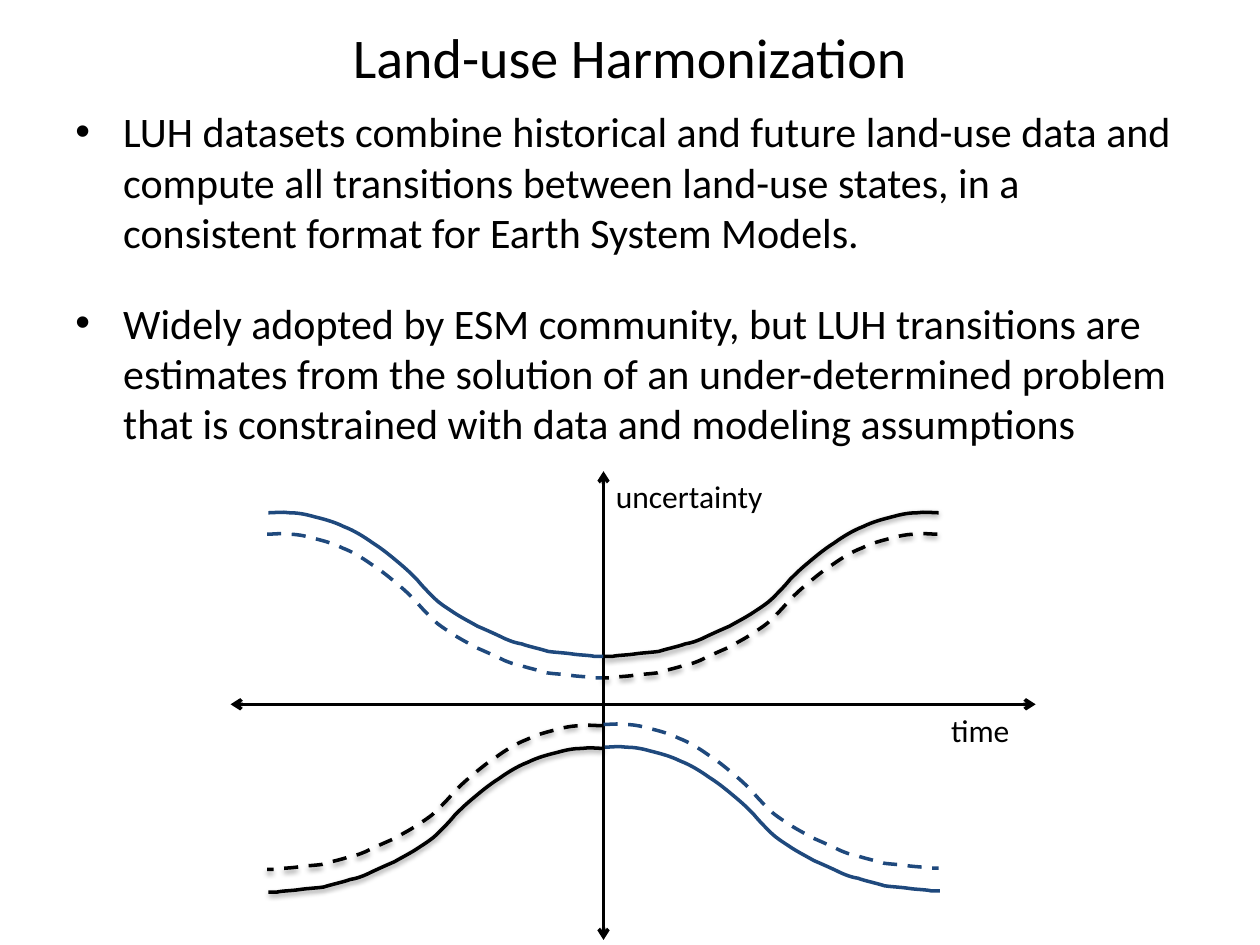
from lxml.etree import SubElement
from pptx import Presentation
from pptx.dml.color import RGBColor
from pptx.enum.dml import MSO_LINE
from pptx.enum.shapes import MSO_CONNECTOR
from pptx.enum.text import MSO_ANCHOR, PP_ALIGN
from pptx.oxml.ns import qn
from pptx.util import Inches, Pt

TITLE = "Land-use Harmonization"
BULLETS = [
    ("LUH datasets combine historical and future land-use data and compute all "
     "transitions between land-use states, in a consistent format for Earth System Models.", 0, 18),
    ("Widely adopted by ESM community, but LUH transitions are estimates from the solution "
     "of an under-determined problem that is constrained with data and modeling assumptions", 5, 6),
]
AXES = [(1.83, 5.59, 8.22, 5.59), (4.79, 3.74, 4.79, 7.46)]
AXIS_LABELS = [("uncertainty", 4.79, 3.74, 1.37, 0.4), ("time", 7.45, 5.59, 0.74, 0.4)]

CURVE_WIDTH = 2.66
CURVE_START = (0, 0.01)
CURVE_BEZIERS = [
    ((0.05, 0.01), (0.11, 0), (0.17, 0.01)),
    ((0.23, 0.01), (0.29, 0.02), (0.36, 0.04)),
    ((0.44, 0.06), (0.52, 0.08), (0.6, 0.12)),
    ((0.68, 0.15), (0.76, 0.2), (0.83, 0.25)),
    ((0.91, 0.3), (0.98, 0.36), (1.04, 0.41)),
    ((1.1, 0.46), (1.13, 0.49), (1.18, 0.54)),
    ((1.22, 0.59), (1.27, 0.64), (1.32, 0.69)),
    ((1.36, 0.73), (1.41, 0.76), (1.47, 0.8)),
    ((1.53, 0.84), (1.59, 0.87), (1.66, 0.91)),
    ((1.73, 0.94), (1.82, 0.98), (1.88, 1.01)),
    ((1.93, 1.03), (1.95, 1.04), (2.01, 1.05)),
    ((2.06, 1.07), (2.16, 1.09), (2.22, 1.11)),
    ((2.29, 1.12), (2.34, 1.12), (2.41, 1.13)),
    ((2.47, 1.14), (2.55, 1.14), (2.59, 1.15)),
    ((2.63, 1.15), (2.66, 1.15), (2.66, 1.15)),
]
# left, top, rising, dashed
CURVES = [
    (2.13, 4.06, False, False),
    (4.8, 5.92, False, False),
    (2.13, 5.93, True, False),
    (4.79, 4.06, True, False),
    (2.12, 4.23, False, True),
    (4.78, 4.23, True, True),
    (4.79, 5.74, False, True),
    (2.12, 5.75, True, True),
]
THEME = {
    "font": "Calibri",
    "black": RGBColor(0, 0, 0),
    "blue": RGBColor(0x1F, 0x49, 0x7D),
    "title": Pt(32),
    "body": Pt(24),
    "label": Pt(18),
    "line": Pt(2),
}


def add_run(paragraph, text, size):
    run = paragraph.add_run()
    run.text = text
    run.font.name = THEME["font"]
    run.font.size = THEME[size]
    run.font.color.rgb = THEME["black"]


def add_title(slide):
    title = slide.shapes.title
    title.left, title.top, title.width, title.height = map(Inches, (0.5, 0.05, 9, 0.79))
    title.text_frame.vertical_anchor = MSO_ANCHOR.MIDDLE
    paragraph = title.text_frame.paragraphs[0]
    paragraph.alignment = PP_ALIGN.CENTER
    add_run(paragraph, TITLE, "title")


def add_bullets(slide):
    frame = slide.shapes.add_textbox(*map(Inches, (0.5, 0.79, 9, 3.04))).text_frame
    frame.word_wrap = True
    for index, (text, before, after) in enumerate(BULLETS):
        paragraph = frame.add_paragraph() if index else frame.paragraphs[0]
        if before:
            paragraph.space_before = Pt(before)
        paragraph.space_after = Pt(after)
        properties = paragraph._p.get_or_add_pPr()
        properties.set("marL", str(Inches(0.38)))
        properties.set("indent", str(-Inches(0.38)))
        SubElement(properties, qn("a:buFont"), typeface="Arial")
        SubElement(properties, qn("a:buChar"), char="•")
        add_run(paragraph, text, "body")


def add_axis(slide, ends):
    axis = slide.shapes.add_connector(MSO_CONNECTOR.STRAIGHT, *map(Inches, ends))
    axis.line.color.rgb = THEME["black"]
    axis.line.width = THEME["line"]
    outline = axis.line._get_or_add_ln()
    for end in ("a:headEnd", "a:tailEnd"):
        SubElement(outline, qn(end), type="arrow")
    SubElement(axis._element.spPr, qn("a:effectLst"))


def round_corners(shape):
    path = shape._element.find(".//" + qn("a:path"))
    segments = path.findall(qn("a:lnTo"))
    for first in range(0, len(segments), 3):
        bezier = SubElement(path, qn("a:cubicBezTo"))
        for segment in segments[first:first + 3]:
            bezier.append(segment[0])
            path.remove(segment)


def add_soft_shadow(shape):
    effects = shape._element.spPr.find(qn("a:effectLst"))
    shadow = SubElement(effects, qn("a:outerShdw"), blurRad=str(Pt(3.1)), dist=str(Pt(1.6)),
                        dir="5400000", rotWithShape="0")
    color = SubElement(shadow, qn("a:srgbClr"), val=str(THEME["black"]))
    SubElement(color, qn("a:alpha"), val="38000")


def add_curve(slide, left, top, rising, dashed):
    def place(point):
        x, y = point
        return Inches(left + (CURVE_WIDTH - x if rising else x)), Inches(top + y)

    builder = slide.shapes.build_freeform(*place(CURVE_START))
    points = [place(point) for bezier in CURVE_BEZIERS for point in bezier]
    builder.add_line_segments(points, close=False)
    curve = builder.convert_to_shape()
    round_corners(curve)
    curve.fill.background()
    curve.line.color.rgb = THEME["black" if rising else "blue"]
    curve.line.width = THEME["line"]
    if dashed:
        curve.line.dash_style = MSO_LINE.DASH
    curve.shadow.inherit = False
    if rising:
        add_soft_shadow(curve)


def add_axis_label(slide, text, *box):
    frame = slide.shapes.add_textbox(*map(Inches, box)).text_frame
    frame.word_wrap = False
    add_run(frame.paragraphs[0], text, "label")


def main():
    presentation = Presentation()
    presentation.slide_width, presentation.slide_height = Inches(10), Inches(7.5)
    slide = presentation.slides.add_slide(presentation.slide_layouts[5])
    add_title(slide)
    add_bullets(slide)
    for ends in AXES:
        add_axis(slide, ends)
    for curve in CURVES:
        add_curve(slide, *curve)
    for label in AXIS_LABELS:
        add_axis_label(slide, *label)
    presentation.save("out.pptx")


if __name__ == "__main__":
    main()
